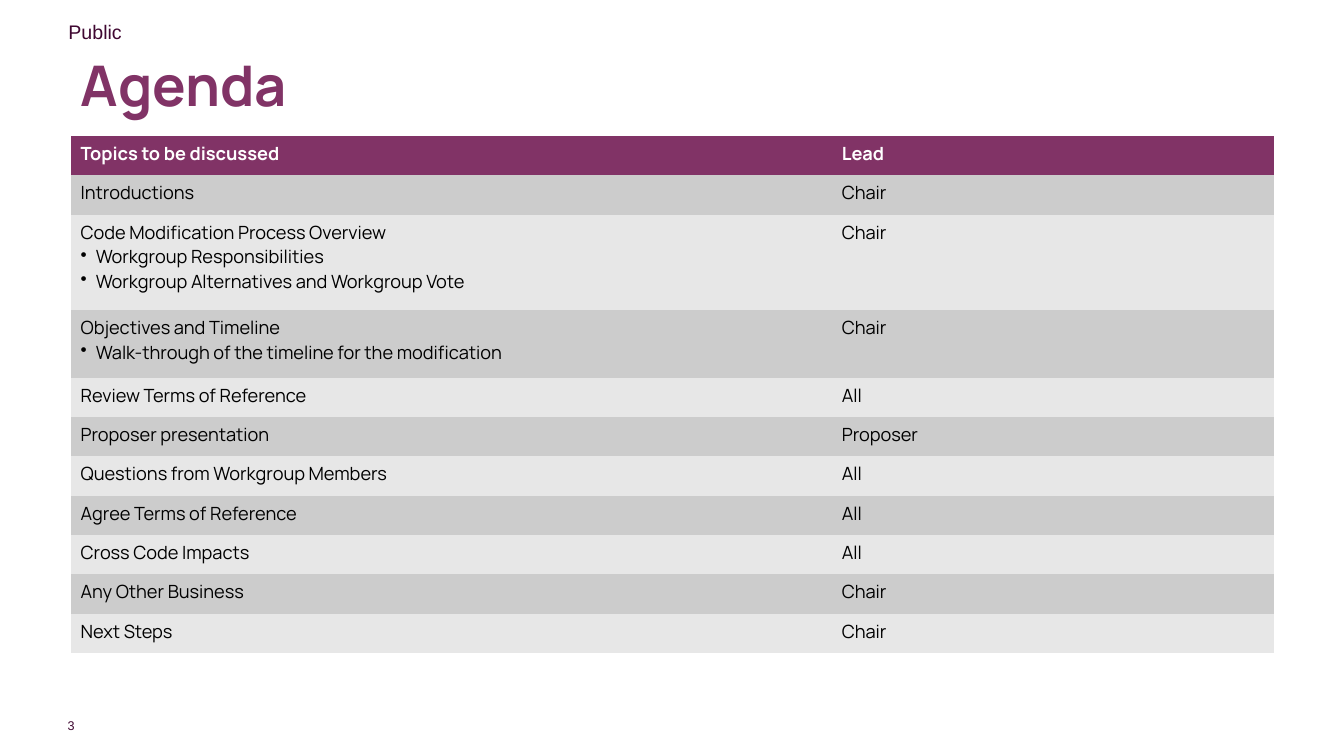
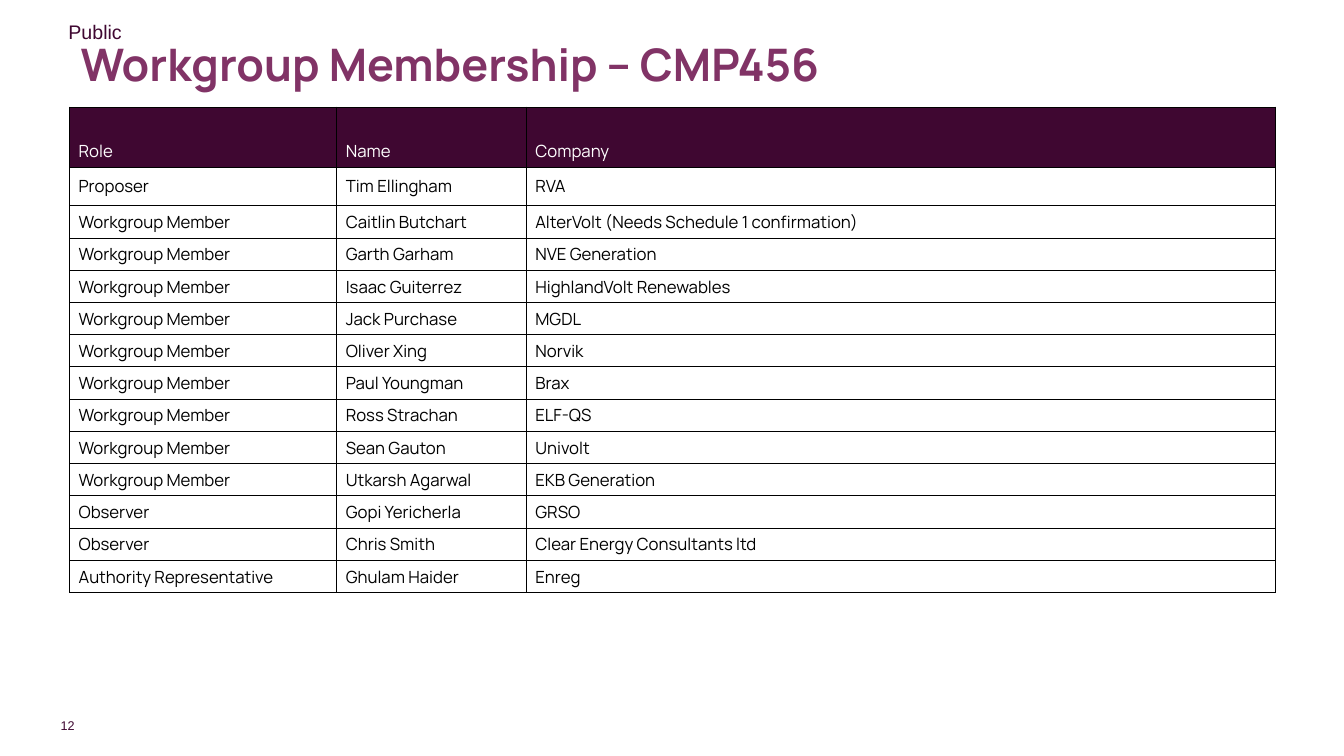
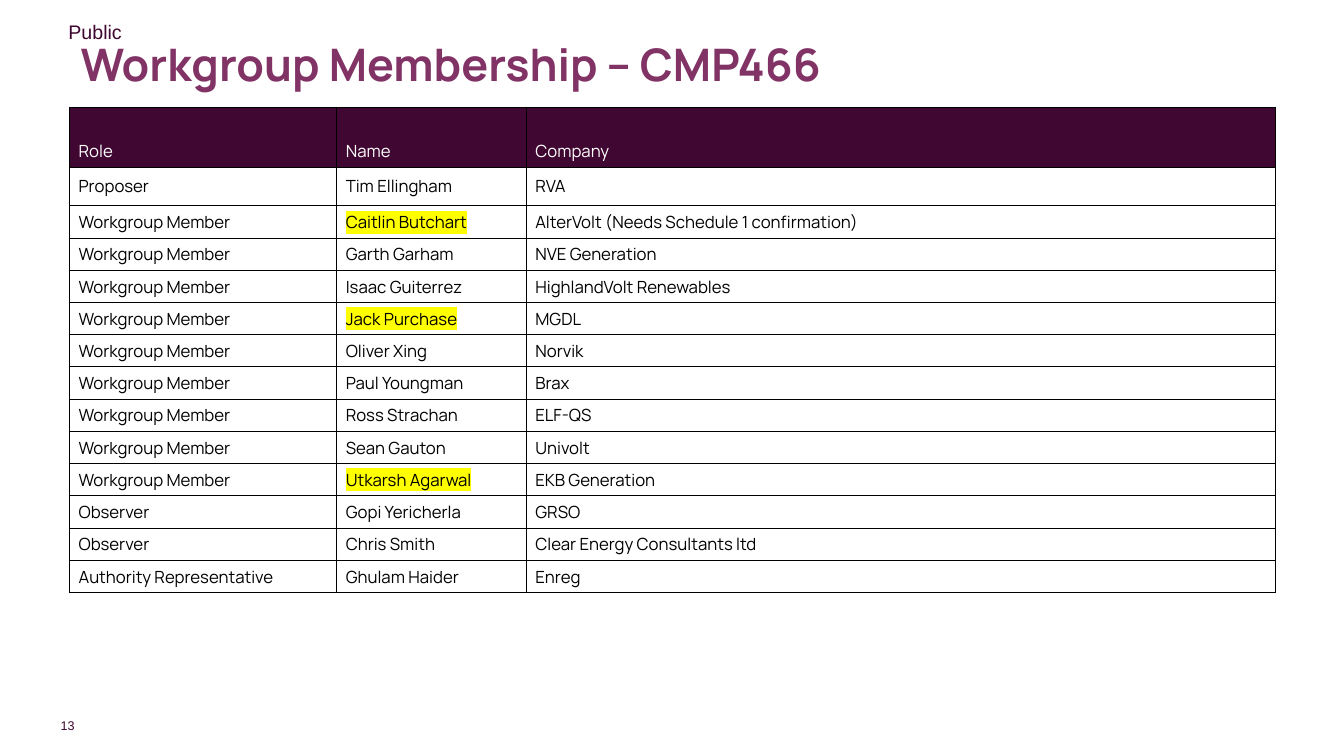
from dataclasses import dataclass

from pptx import Presentation
from pptx.dml.color import RGBColor as RGB
from pptx.enum.text import MSO_ANCHOR as ANCHOR, MSO_AUTO_SIZE as AUTO, PP_ALIGN as ALIGN
from pptx.oxml.ns import qn
from pptx.oxml.xmlchemy import OxmlElement as Element
from pptx.util import Inches, Pt


@dataclass(frozen=True)
class Theme:
    heading: str = "Manrope"
    label: str = "Arial"
    plum: str = "813366"
    dark: str = "3F0731"
    white: str = "FFFFFF"
    black: str = "000000"
    band_dark: str = "CCCCCC"
    band_light: str = "E7E7E7"
    mark: str = "FFFF00"
    title: int = 40
    title_small: int = 32
    public: int = 14
    agenda: int = 13
    member: int = 12
    number: int = 9


T = Theme()
TITLE_ONLY = 5

AGENDA = [
    ("Introductions", "Chair"),
    ("Code Modification Process Overview\nWorkgroup Responsibilities\n"
     "Workgroup Alternatives and Workgroup Vote", "Chair"),
    ("Objectives and Timeline\nWalk-through of the timeline for the modification", "Chair"),
    ("Review Terms of Reference", "All"),
    ("Proposer presentation", "Proposer"),
    ("Questions from Workgroup Members", "All"),
    ("Agree Terms of Reference", "All"),
    ("Cross Code Impacts", "All"),
    ("Any Other Business", "Chair"),
    ("Next Steps", "Chair"),
]
AGENDA_HEIGHTS = {1: 0.39, 2: 0.67, 3: 0.95}  # by number of lines

MEMBER = "Workgroup Member"
MEMBERS = [
    ("Proposer", "Tim Ellingham", "RVA"),
    (MEMBER, "Caitlin Butchart", "AlterVolt (Needs Schedule 1 confirmation)"),
    (MEMBER, "Garth Garham", "NVE Generation"),
    (MEMBER, "Isaac Guiterrez", "HighlandVolt Renewables"),
    (MEMBER, "Jack Purchase", "MGDL"),
    (MEMBER, "Oliver Xing", "Norvik"),
    (MEMBER, "Paul Youngman", "Brax"),
    (MEMBER, "Ross Strachan", "ELF-QS"),
    (MEMBER, "Sean Gauton", "Univolt"),
    (MEMBER, "Utkarsh Agarwal", "EKB Generation"),
    ("Observer", "Gopi Yericherla", "GRSO"),
    ("Observer", "Chris Smith", "Clear Energy Consultants ltd"),
    ("Authority Representative", "Ghulam Haider", "Enreg"),
]


def set_all(obj, **values):
    for name, value in values.items():
        setattr(obj, name, value)


def style(font, face, size, color, bold=False):
    set_all(font, name=face, size=Pt(size), bold=bold)
    font.color.rgb = RGB.from_string(color)


def add_label(slide, box, text, size, **frame):
    tf = slide.shapes.add_textbox(*map(Inches, box)).text_frame
    set_all(tf, **frame)
    p = tf.paragraphs[0]
    r = p.add_run()
    r.text = text
    style(r.font, T.label, size, T.dark)
    return p


def add_base(prs, title, number, top, size):
    """Title, marking and page number shared by every slide."""
    slide = prs.slides.add_slide(prs.slide_layouts[TITLE_ONLY])
    sp = slide.shapes.title
    set_all(sp, left=Inches(0.7), top=Inches(top), width=Inches(10.62), height=Inches(0.95))
    tf = sp.text_frame
    set_all(tf, text=title, vertical_anchor=ANCHOR.MIDDLE, auto_size=AUTO.NONE)
    p = tf.paragraphs[0]
    set_all(p, alignment=ALIGN.LEFT, line_spacing=0.9)
    style(p.runs[0].font, T.heading, size, T.plum, bold=True)

    add_label(slide, (0.58, 0.15, 5, 0.34), "Public", T.public, word_wrap=True)
    p = add_label(slide, (0.59, 7.12, 0.15, 0.15), str(number), T.number,
                  word_wrap=False, vertical_anchor=ANCHOR.MIDDLE,
                  margin_left=0, margin_right=0, margin_top=0, margin_bottom=0)
    p.alignment = ALIGN.RIGHT
    return slide


def set_borders(cell, color):
    tc_pr = cell._tc.get_or_add_tcPr()
    for side in ("a:lnL", "a:lnR", "a:lnT", "a:lnB"):
        ln = Element(side)
        ln.set("w", str(Pt(0.5)))
        fill = Element("a:solidFill" if color else "a:noFill")
        if color:
            rgb = Element("a:srgbClr")
            rgb.set("val", color)
            fill.append(rgb)
        ln.append(fill)
        tc_pr.append(ln)


def set_bullet(p):
    p_pr = p._p.get_or_add_pPr()
    p_pr.set("marL", str(Inches(0.15)))
    p_pr.set("indent", str(-Inches(0.15)))
    bullet = Element("a:buChar")
    bullet.set("char", "•")
    p_pr.append(bullet)


def highlight(r):
    mark, rgb = Element("a:highlight"), Element("a:srgbClr")
    rgb.set("val", T.mark)
    mark.append(rgb)
    r._r.get_or_add_rPr().find(qn("a:solidFill")).addnext(mark)


def fill_cell(cell, text, size, color, bold=False, fill=None, border=None,
              anchor=ANCHOR.TOP, margin=0.1, marked=False):
    set_borders(cell, border)
    if fill:
        cell.fill.solid()
        cell.fill.fore_color.rgb = RGB.from_string(fill)
    else:
        cell.fill.background()
    set_all(cell, vertical_anchor=anchor, margin_left=Inches(margin), margin_right=Inches(margin),
            margin_top=Inches(0.05), margin_bottom=Inches(0.05))
    tf = cell.text_frame
    for i, line in enumerate(text.split("\n")):
        p = tf.add_paragraph() if i else tf.paragraphs[0]
        if i:
            set_bullet(p)
        r = p.add_run()
        r.text = line
        style(r.font, T.heading, size, color, bold)
        if marked:
            highlight(r)


def add_grid(slide, left, top, widths, heights):
    box = map(Inches, (left, top, sum(widths), sum(heights)))
    table = slide.shapes.add_table(len(heights), len(widths), *box).table
    table.horz_banding = False
    for column, width in zip(table.columns, widths):
        column.width = Inches(width)
    for row, height in zip(table.rows, heights):
        row.height = Inches(height)
    return table


def add_agenda(prs, number):
    slide = add_base(prs, "Agenda", number, top=0.4, size=T.title)
    rows = [("Topics to be discussed", "Lead")] + AGENDA
    heights = [AGENDA_HEIGHTS[topic.count("\n") + 1] for topic, _ in rows]
    table = add_grid(slide, 0.7, 1.35, (7.55, 4.39), heights)
    for i, row in enumerate(rows):
        if i == 0:
            look = dict(color=T.white, fill=T.plum, bold=True)
        else:
            look = dict(color=T.black, fill=T.band_dark if i % 2 else T.band_light)
        for j, text in enumerate(row):
            fill_cell(table.cell(i, j), text, T.agenda, **look)


def add_membership(prs, code, number, marked=()):
    slide = add_base(prs, f"Workgroup Membership – {code}", number, top=0.19, size=T.title_small)
    rows = [("Role", "Name", "Company")] + MEMBERS
    heights = [0.6, 0.38] + [0.32] * (len(rows) - 2)
    table = add_grid(slide, 0.69, 1.06, (2.65, 1.88, 7.43), heights)
    for i, row in enumerate(rows):
        if i == 0:
            look = dict(color=T.white, fill=T.dark, anchor=ANCHOR.BOTTOM)
        else:
            look = dict(color=T.black, anchor=ANCHOR.MIDDLE)
        for j, text in enumerate(row):
            fill_cell(table.cell(i, j), text, T.member, border=T.black, margin=0.09,
                      marked=text in marked, **look)


def main():
    prs = Presentation()
    set_all(prs, slide_width=Inches(13.33), slide_height=Inches(7.5))
    add_agenda(prs, 3)
    add_membership(prs, "CMP456", 12)
    add_membership(prs, "CMP466", 13,
                   marked=("Caitlin Butchart", "Jack Purchase", "Utkarsh Agarwal"))
    prs.save("out.pptx")


if __name__ == "__main__":
    main()
